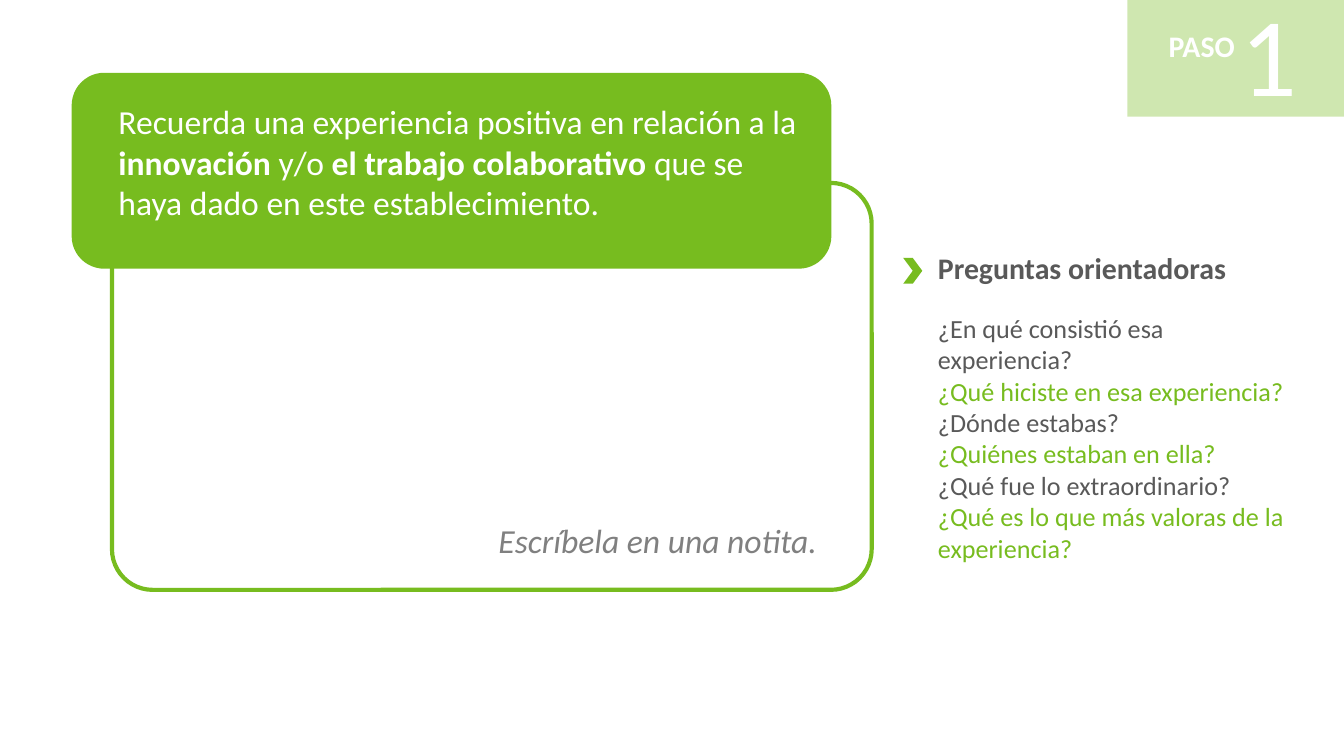
from lxml import etree
from pptx import Presentation
from pptx.dml.color import RGBColor
from pptx.enum.shapes import MSO_SHAPE
from pptx.enum.text import MSO_ANCHOR, PP_ALIGN
from pptx.oxml.ns import qn
from pptx.util import Pt

ROUNDED, RECTANGLE, CHEVRON = (
    MSO_SHAPE.ROUNDED_RECTANGLE, MSO_SHAPE.RECTANGLE, MSO_SHAPE.CHEVRON)
TOP, MIDDLE = MSO_ANCHOR.TOP, MSO_ANCHOR.MIDDLE
LEFT, CENTER = PP_ALIGN.LEFT, PP_ALIGN.CENTER

COLORS = {"green": "77BC1F", "white": "FFFFFF", "dark": "595959", "gray": "808080"}
FONT = "Calibri"
INSET = 7.2

PROMPT = [
    ("Recuerda una experiencia positiva en relación a la ", False),
    ("innovación", True),
    (" y/o ", False),
    ("el trabajo colaborativo ", True),
    ("que se haya dado en este establecimiento.", False),
]
QUESTIONS = [
    "¿En qué consistió esa experiencia?",
    "¿Qué hiciste en esa experiencia?",
    "¿Dónde estabas?",
    "¿Quiénes estaban en ella?",
    "¿Qué fue lo extraordinario?",
    "¿Qué es lo que más valoras de la experiencia?",
]


def rgb(name):
    return RGBColor.from_string(COLORS[name])


def add_panel(page, kind, box, fill, line=None, alpha=None):
    """Add a filled shape, with an optional outline and opacity in percent."""
    shape = page.shapes.add_shape(kind, *map(Pt, box))
    shape.shadow.inherit = False
    shape.fill.solid()
    shape.fill.fore_color.rgb = rgb(fill)
    if line:
        shape.line.color.rgb = rgb(line)
        shape.line.width = Pt(2.25)
    else:
        shape.line.fill.background()
    if alpha:
        color = shape.fill._xPr.find(".//" + qn("a:srgbClr"))
        etree.SubElement(color, qn("a:alpha"), val=str(alpha * 1000))
    return shape


def add_text(page, box, paragraphs, anchor=TOP, bottom=INSET):
    """Add a text box; each paragraph is (spans, paragraph format)."""
    frame = page.shapes.add_textbox(*map(Pt, box)).text_frame
    settings = {"word_wrap": True, "vertical_anchor": anchor,
                "margin_left": Pt(INSET), "margin_right": Pt(INSET),
                "margin_top": Pt(INSET), "margin_bottom": Pt(bottom)}
    for name, value in settings.items():
        setattr(frame, name, value)
    for index, (spans, layout) in enumerate(paragraphs):
        para = frame.add_paragraph() if index else frame.paragraphs[0]
        for name, value in {"alignment": LEFT, **layout}.items():
            setattr(para, name, value)
        for text, size, color, style in spans:
            span = para.add_run()
            span.text = text
            span.font.color.rgb = rgb(color)
            for name, value in {"name": FONT, "size": Pt(size), **style}.items():
                setattr(span.font, name, value)


def add_answer_card(page, box):
    """White card with the green prompt overlapping its top left corner."""
    left, top, width, height = box
    card = add_panel(page, ROUNDED, (left, top, width, height), "white", "green")
    card.adjustments[0] = 0.1
    add_panel(page, ROUNDED, (left - 21.6, top - 59, width, 105), "green")
    spans = [(text, 18, "white", {"bold": bold}) for text, bold in PROMPT]
    add_text(page, (left - 3.6, top - 51, 379, 107), [(spans, {})])
    # Instruction at the foot of the card
    note = ("Escríbela en una notita.", 18, "gray", {"italic": True})
    add_text(page, (left + 200, top + height - 54.5, 208, 56), [([note], {})], MIDDLE)


def add_step_badge(page, box):
    """Pale step badge in the slide corner."""
    left, top, width, height = box
    add_panel(page, RECTANGLE, box, "green", alpha=35)
    label = ("PASO", 16, "white", {"bold": True})
    add_text(page, (left + 15, top + 5, 59, 25), [([label], {"line_spacing": 1.15})])
    number = ("1", 60, "white", {})
    add_text(page, (left + 38, top - 7, 76, height + 7),
             [([number], {"alignment": CENTER})], MIDDLE)


def add_questions(page, box):
    """Chevron, heading and guiding questions in alternating colours."""
    left, top, width, height = box
    heading = ("Preguntas orientadoras", 16, "dark", {"bold": True})
    paragraphs = [([heading], {"space_after": Pt(14.6)})]
    for index, question in enumerate(QUESTIONS):
        color = "green" if index % 2 else "dark"
        paragraphs.append(([(question, 14, color, {})], {}))
    add_text(page, box, paragraphs, MIDDLE, bottom=21.8)
    add_panel(page, CHEVRON, (left - 11.5, top - 3.6, 10.2, 13.8), "green")


def main():
    deck = Presentation()
    deck.slide_width, deck.slide_height = Pt(720), Pt(405)
    page = deck.slides.add_slide(deck.slide_layouts[6])
    add_answer_card(page, (60, 98, 407, 218))
    add_step_badge(page, (604, 0, 116, 62.5))
    add_questions(page, (495.4, 141.8, 204.5, 166.3))
    deck.save("out.pptx")


if __name__ == "__main__":
    main()
